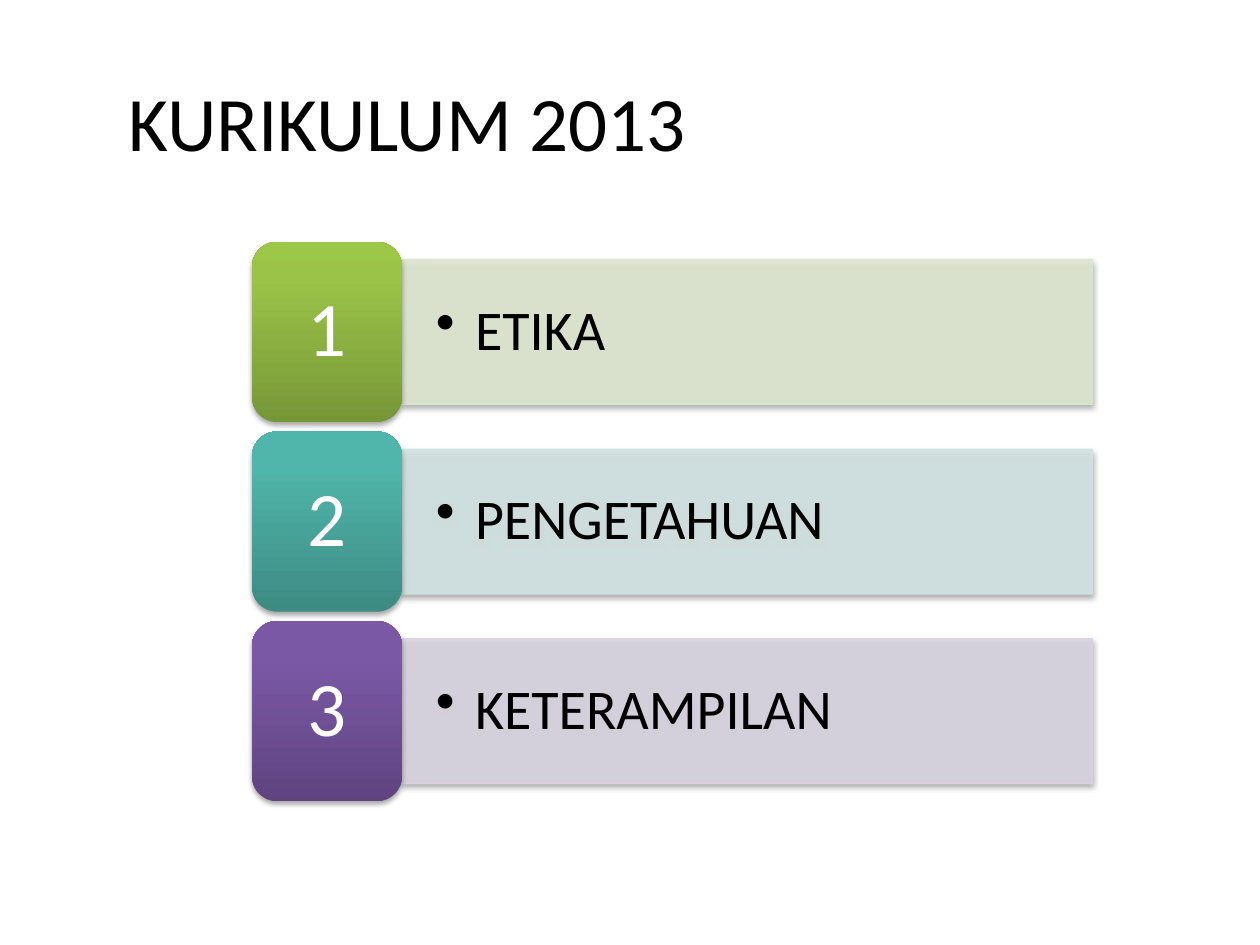
from lxml.etree import SubElement
from pptx import Presentation
from pptx.dml.color import RGBColor
from pptx.enum.shapes import MSO_SHAPE
from pptx.enum.text import MSO_ANCHOR, PP_ALIGN
from pptx.oxml.ns import qn
from pptx.util import Inches, Pt


def rgb(hex_string):
    return RGBColor.from_string(hex_string)


def add_block(kind, left, top, width, height):
    """Add a shape with a soft shadow below it and vertically centred text."""
    block = slide.shapes.add_shape(
        kind, Inches(left), Inches(top), Inches(width), Inches(height))
    block.shadow.inherit = False
    effects = block._element.spPr.find(qn("a:effectLst"))
    shadow = SubElement(effects, qn("a:outerShdw"), blurRad="40000",
                        dist="23000", dir="5400000", rotWithShape="0")
    black = SubElement(shadow, qn("a:srgbClr"), val="000000")
    SubElement(black, qn("a:alpha"), val="35000")
    block.text_frame.word_wrap = True
    block.text_frame.vertical_anchor = MSO_ANCHOR.MIDDLE
    return block


prs = Presentation()
prs.slide_width, prs.slide_height = Inches(10), Inches(7.5)
slide = prs.slides.add_slide(prs.slide_layouts[6])

# Grid: number tiles on the left, topic bars centred on them
TILE_LEFT, FIRST_TOP, ROW_PITCH = 2, 1.92, 1.505
TILE_WIDTH, TILE_HEIGHT = 1.19, 1.43
BAR_WIDTH, BAR_HEIGHT = 5.48, 1.15

# Topic, bar colour, tile gradient from bottom to top
topics = [
    ("ETIKA", "DEE7D1", ("779737", "9BC348", "9DC746")),
    ("PENGETAHUAN", "D2E3E2", ("3D8B83", "50B5AA", "4EB8AC")),
    ("KETERAMPILAN", "D8D3E0", ("5F4480", "7B58A6", "7C57A8")),
]

for row, (topic, bar_color, tile_colors) in enumerate(topics):
    top = FIRST_TOP + row * ROW_PITCH

    # Topic bar, slightly transparent
    bar = add_block(MSO_SHAPE.RECTANGLE, TILE_LEFT + TILE_WIDTH,
                    top + (TILE_HEIGHT - BAR_HEIGHT) / 2, BAR_WIDTH, BAR_HEIGHT)
    bar.fill.solid()
    bar.fill.fore_color.rgb = rgb(bar_color)
    bar.line.color.rgb = rgb(bar_color)
    bar.line.width = Pt(0.75)
    for color in bar._element.spPr.findall(f"{{*}}solidFill/{{*}}srgbClr") + \
            bar._element.spPr.findall("{*}ln/{*}solidFill/{*}srgbClr"):
        SubElement(color, qn("a:alpha"), val="90000")

    # Bulleted topic
    bar.text_frame.margin_left = bar.text_frame.margin_right = Inches(0.27)
    bullet = bar.text_frame.paragraphs[0]
    bullet.text = topic
    bullet.alignment = PP_ALIGN.LEFT
    bullet.line_spacing = 0.9
    bullet_props = bullet._p.get_or_add_pPr()
    bullet_props.set("marL", str(Inches(0.31)))
    bullet_props.set("indent", str(-Inches(0.31)))
    SubElement(bullet_props, qn("a:buChar"), char="•")
    bullet.font.name, bullet.font.size = "Calibri", Pt(32)
    bullet.font.color.rgb = rgb("000000")

    # Number tile
    tile = add_block(MSO_SHAPE.ROUNDED_RECTANGLE, TILE_LEFT, top,
                     TILE_WIDTH, TILE_HEIGHT)
    tile.fill.gradient()
    tile.fill.gradient_angle = 90
    stops = tile._element.spPr.find("{*}gradFill/{*}gsLst")
    for old_stop in list(stops):
        stops.remove(old_stop)
    for position, color in zip((0, 80000, 100000), tile_colors):
        stop = SubElement(stops, qn("a:gs"), pos=str(position))
        SubElement(stop, qn("a:srgbClr"), val=color)
    tile.line.fill.background()
    number = tile.text_frame.paragraphs[0]
    number.text = str(row + 1)
    number.alignment = PP_ALIGN.CENTER
    number.line_spacing = 0.9
    number.font.name, number.font.size = "Calibri", Pt(44)
    number.font.color.rgb = rgb("FFFFFF")

# Title
title_box = slide.shapes.add_textbox(
    Inches(0.92), Inches(0.33), Inches(8.83), Inches(1.25))
title_box.text_frame.word_wrap = True
title_box.text_frame.vertical_anchor = MSO_ANCHOR.MIDDLE
title = title_box.text_frame.paragraphs[0]
title.text = "KURIKULUM 2013"
title.font.name, title.font.size = "Calibri", Pt(44)
title.font.color.rgb = rgb("000000")

prs.save("out.pptx")
